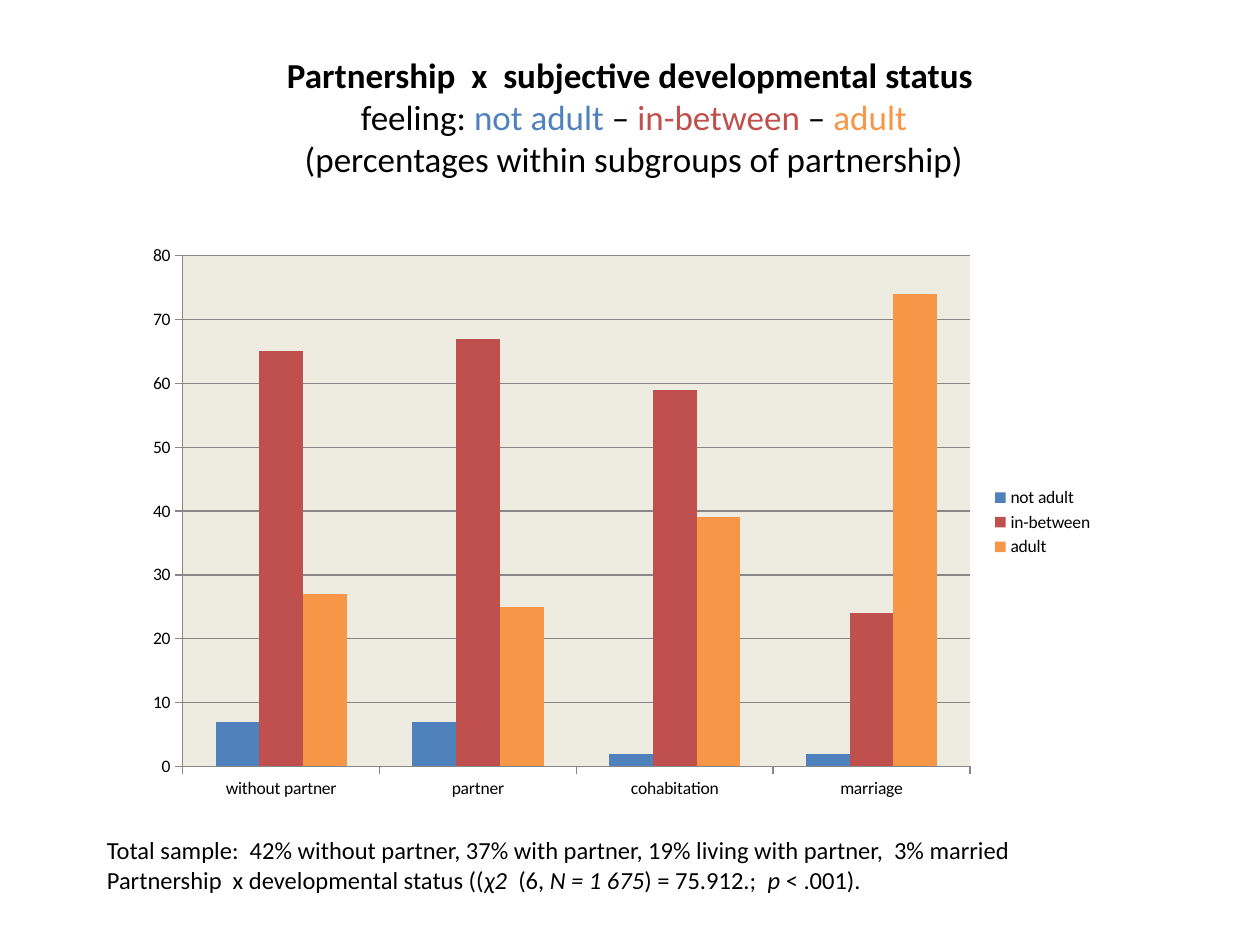
import dataclasses

import lxml.etree
import pptx
import pptx.chart.data
import pptx.dml.color
import pptx.enum.chart
import pptx.enum.text
import pptx.oxml
import pptx.oxml.ns
import pptx.util

Inches = pptx.util.Inches


@dataclasses.dataclass(frozen=True)
class Theme:
    font: str = "Calibri"
    text: str = "000000"
    not_adult: str = "4F81BD"
    in_between: str = "C0504D"
    adult: str = "F79646"
    plot: str = "EEECE1"
    axis: str = "878787"
    title_size: int = 20
    note_size: int = 14
    chart_size: int = 10


THEME = Theme()
CATEGORIES = ["without partner", "partner", "cohabitation", "marriage"]
SERIES = [
    ("not adult", (7, 7, 2, 2), THEME.not_adult),
    ("in-between", (65, 67, 59, 24), THEME.in_between),
    ("adult", (27, 25, 39, 74), THEME.adult),
]
TITLE_LINES = [
    [("Partnership  x  subjective developmental status", THEME.text, True)],
    [
        (" feeling: ", THEME.text, False),
        ("not adult ", THEME.not_adult, False),
        ("– ", THEME.text, False),
        ("in-between", THEME.in_between, False),
        (" – ", THEME.text, False),
        ("adult", THEME.adult, False),
    ],
    [(" (percentages within subgroups of partnership)", THEME.text, False)],
]
NOTE_LINES = [
    [("Total sample:  42% without partner, 37% with partner, "
      "19% living with partner,  3% married", False)],
    [
        ("Partnership  x developmental status ((", False),
        ("χ2  ", True),
        ("(6, ", False),
        ("N = 1 675", True),
        (") = 75.912.;  ", False),
        ("p", True),
        (" < .001).", False),
    ],
]


def rgb(color):
    return pptx.dml.color.RGBColor.from_string(color)


def style_font(font, size, color=THEME.text, bold=False, italic=False):
    font.name = THEME.font
    font.size = pptx.util.Pt(size)
    font.color.rgb = rgb(color)
    font.bold = bold
    font.italic = italic


def add_span(para, text, size, **style):
    span = para.add_run()
    span.text = text
    style_font(span.font, size, **style)


def place(box, left, top, width, height):
    box.left, box.top = Inches(left), Inches(top)
    box.width, box.height = Inches(width), Inches(height)


def fill_title(title):
    place(title, 0.5, 0.3, 9, 1.25)
    title.text_frame.vertical_anchor = pptx.enum.text.MSO_ANCHOR.MIDDLE
    para = title.text_frame.paragraphs[0]
    para.alignment = pptx.enum.text.PP_ALIGN.CENTER
    for index, line in enumerate(TITLE_LINES):
        if index:
            para.add_line_break()
        for text, color, bold in line:
            add_span(para, text, THEME.title_size, color=color, bold=bold)


def style_axis(axis):
    axis.major_tick_mark = pptx.enum.chart.XL_TICK_MARK.OUTSIDE
    axis.format.line.color.rgb = rgb(THEME.axis)
    style_font(axis.tick_labels.font, THEME.chart_size)


def fill_plot_area(chart):
    plot_area = chart._chartSpace.chart.plotArea
    properties = lxml.etree.SubElement(plot_area, pptx.oxml.ns.qn("c:spPr"))
    fill = lxml.etree.SubElement(properties, pptx.oxml.ns.qn("a:solidFill"))
    lxml.etree.SubElement(fill, pptx.oxml.ns.qn("a:srgbClr"), val=THEME.plot)


def add_status_chart(page):
    data = pptx.chart.data.CategoryChartData()
    data.categories = CATEGORIES
    for name, values, _ in SERIES:
        data.add_series(name, values)
    chart = page.shapes.add_chart(
        pptx.enum.chart.XL_CHART_TYPE.COLUMN_CLUSTERED,
        Inches(1.06), Inches(1.86), Inches(7.72), Inches(4.57), data,
    ).chart
    style_font(chart.font, THEME.chart_size)
    chart.has_title = False
    chart.has_legend = True
    chart.legend.position = pptx.enum.chart.XL_LEGEND_POSITION.RIGHT
    chart.legend.include_in_layout = False
    style_font(chart.legend.font, THEME.chart_size)

    plot = chart.plots[0]
    plot.gap_width = 150
    plot.overlap = 0
    plot.vary_by_categories = False
    for series, (_, _, color) in zip(plot.series, SERIES):
        series.format.fill.solid()
        series.format.fill.fore_color.rgb = rgb(color)

    style_axis(chart.category_axis)
    style_axis(chart.value_axis)
    chart.value_axis.minimum_scale = 0
    chart.value_axis.maximum_scale = 80
    chart.value_axis.major_unit = 10
    chart.value_axis.has_major_gridlines = True
    chart.value_axis.major_gridlines.format.line.color.rgb = rgb(THEME.axis)
    fill_plot_area(chart)


def add_note(page):
    box = page.shapes.add_textbox(
        Inches(0.75), Inches(6.58), Inches(8.74), Inches(0.57))
    frame = box.text_frame
    frame.word_wrap = True
    frame.auto_size = pptx.enum.text.MSO_AUTO_SIZE.SHAPE_TO_FIT_TEXT
    for index, line in enumerate(NOTE_LINES):
        para = frame.add_paragraph() if index else frame.paragraphs[0]
        for text, italic in line:
            add_span(para, text, THEME.note_size, italic=italic)


def main():
    deck = pptx.Presentation()
    deck.slide_width, deck.slide_height = Inches(10), Inches(7.5)
    page = deck.slides.add_slide(deck.slide_layouts.get_by_name("Title Only"))
    fill_title(page.shapes.title)
    add_status_chart(page)
    add_note(page)
    deck.save("out.pptx")


if __name__ == "__main__":
    main()
